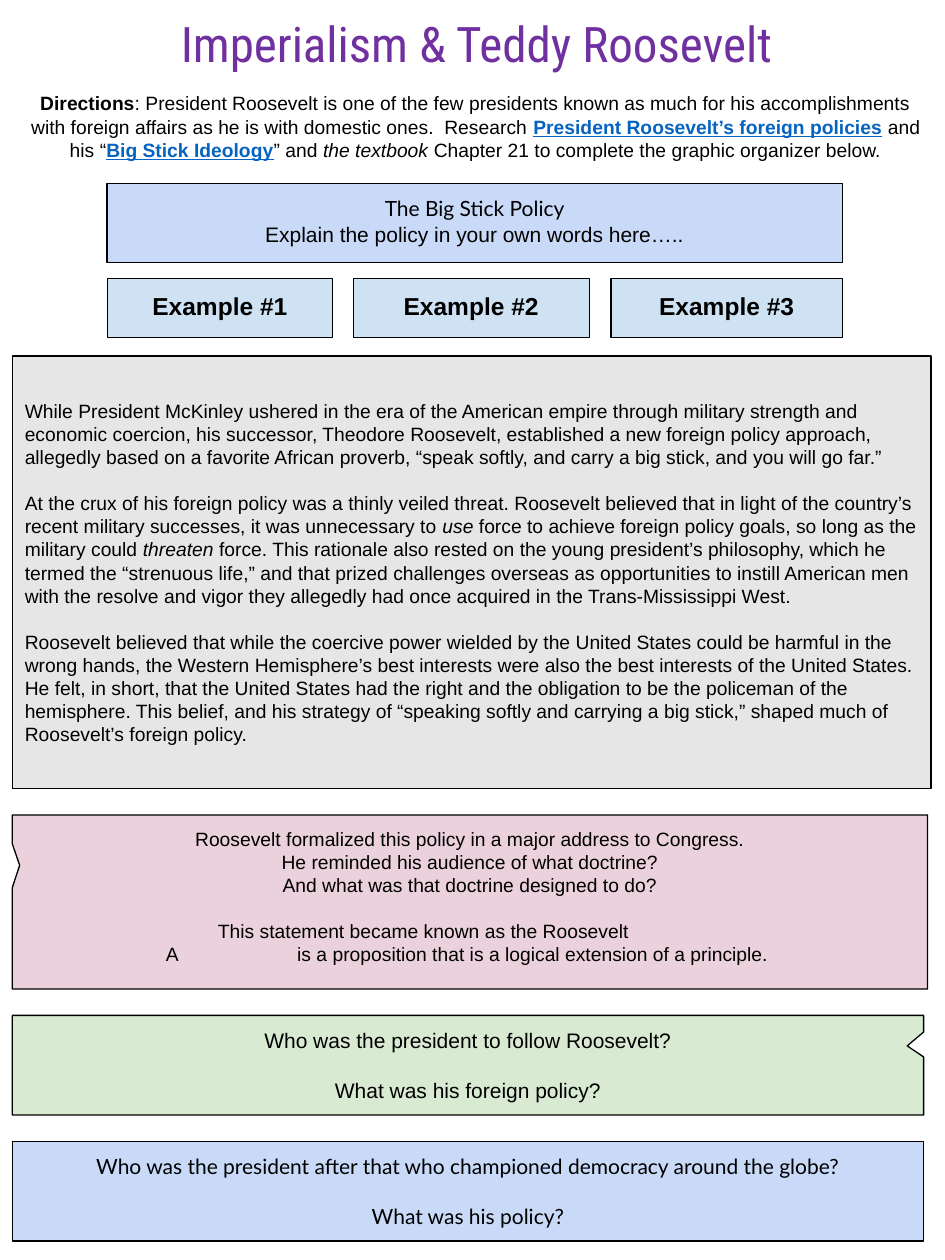
from pptx import Presentation
from pptx import util as u
from pptx.dml.color import RGBColor
from pptx.enum import shapes, text

BLACK = RGBColor(0x00, 0x00, 0x00)
PURPLE = RGBColor(0x70, 0x30, 0xA0)
LINK = RGBColor(0x05, 0x63, 0xC1)
BLUE = RGBColor(0xC9, 0xDA, 0xF8)
PALE = RGBColor(0xCF, 0xE2, 0xF3)
GREY = RGBColor(0xE7, 0xE6, 0xE6)
PINK = RGBColor(0xEA, 0xD1, 0xDC)
GREEN = RGBColor(0xD9, 0xEA, 0xD3)

RECT = shapes.MSO_SHAPE.RECTANGLE
CALL = shapes.MSO_SHAPE.RECTANGULAR_CALLOUT
MID = text.MSO_ANCHOR.MIDDLE
TOP = text.MSO_ANCHOR.TOP
LEFT = text.PP_ALIGN.LEFT
MARGIN = 0.25

# Each paragraph is a list of (text, style) runs; "\n" is a line break.
GUIDE = [
    ("Directions", "b"),
    (": President Roosevelt is one of the few presidents known as much for "
     "his accomplishments with foreign affairs as he is with domestic ones.  "
     "Research ", ""),
    ("President Roosevelt’s foreign policies", "link"),
    (" and his “", ""),
    ("Big Stick Ideology", "link"),
    ("” and ", ""),
    ("the textbook ", "i"),
    ("Chapter 21 to complete the graphic organizer below.", ""),
]
STORY = [
    [("While President McKinley ushered in the era of the American empire "
      "through military strength and economic coercion, his successor, "
      "Theodore Roosevelt, established a new foreign policy approach, "
      "allegedly based on a favorite African proverb, “speak softly, and "
      "carry a big stick, and you will go far.”", "")],
    [("At the crux of his foreign policy was a thinly veiled threat. "
      "Roosevelt believed that in light of the country’s recent military "
      "successes, it was unnecessary to ", ""),
     ("use", "i"),
     (" force to achieve foreign policy goals, so long as the military "
      "could ", ""),
     ("threaten", "i"),
     (" force. This rationale also rested on the young president’s "
      "philosophy, which he termed the “strenuous life,” and that prized "
      "challenges overseas as opportunities to instill American men with "
      "the resolve and vigor they allegedly had once acquired in the "
      "Trans-Mississippi West.", "")],
    [("Roosevelt believed that while the coercive power wielded by the "
      "United States could be harmful in the wrong hands, the Western "
      "Hemisphere’s best interests were also the best interests of the "
      "United States. He felt, in short, that the United States had the "
      "right and the obligation to be the policeman of the hemisphere. This "
      "belief, and his strategy of “speaking softly and carrying a big "
      "stick,” shaped much of Roosevelt’s foreign policy.", "")],
]
SPEECH = [
    [("Roosevelt formalized this policy in a major address to Congress.", "")],
    [("He reminded his audience of what doctrine?", "")],
    [("And what was that doctrine designed to do?", "")],
    [("This statement became known as the Roosevelt ", ""), ("\t\t", "u"),
     ("\n", ""), ("A ", ""), ("\t\t", "u"),
     (" is a proposition that is a logical extension of a principle. ", "")],
]


def add_runs(para, runs):
    for words, style in runs:
        if words == "\n":
            para.add_line_break()
            continue
        run = para.add_run()
        run.text = words
        if style in ("b", "link"):
            run.font.bold = True
        if style in ("u", "link"):
            run.font.underline = True
        if style == "i":
            run.font.italic = True
        if style == "link":
            run.font.color.rgb = LINK


def set_font(para, size, name="Arial", color=BLACK):
    para.font.size = u.Pt(size)
    para.font.name = name
    para.font.color.rgb = color


def write(shape, paras, size, fonts=("Arial",), anchor=TOP,
          align=text.PP_ALIGN.CENTER, gaps=()):
    """Fill a shape; gaps gives the space before paragraphs by index."""
    frame = shape.text_frame
    frame.word_wrap = True
    frame.vertical_anchor = anchor
    frame.margin_left = frame.margin_right = u.Cm(0.25)
    frame.margin_top = frame.margin_bottom = u.Cm(0.25)
    gaps = dict(gaps)
    for i, runs in enumerate(paras):
        para = frame.paragraphs[0] if i == 0 else frame.add_paragraph()
        para.alignment = align
        if i in gaps:
            para.space_before = u.Pt(gaps[i])
        set_font(para, size, fonts[i % len(fonts)])
        add_runs(para, runs)


def add_box(slide, place, fill, kind=RECT, tip=()):
    box = slide.shapes.add_shape(kind, *map(u.Cm, place))
    box.shadow.inherit = False
    box.fill.solid()
    box.fill.fore_color.rgb = fill
    box.line.color.rgb = BLACK
    box.line.width = u.Pt(0.75)
    for i, value in enumerate(tip):
        box.adjustments[i] = value
    return box


def add_title(slide, words):
    title = slide.shapes.title
    title.left, title.top = u.Cm(1.09), u.Cm(0.15)
    title.width, title.height = u.Cm(17.02), u.Cm(1.45)
    frame = title.text_frame
    frame.text = words
    frame.vertical_anchor = TOP
    frame.auto_size = text.MSO_AUTO_SIZE.NONE
    set_font(frame.paragraphs[0], 28, "Roboto Condensed", PURPLE)


def main():
    deck = Presentation()
    deck.slide_width, deck.slide_height = u.Cm(19.05), u.Cm(25.4)
    slide = deck.slides.add_slide(deck.slide_layouts[5])

    # Heading and directions
    add_title(slide, "Imperialism & Teddy Roosevelt")
    guide = slide.shapes.add_textbox(*map(u.Cm, (0.33, 1.65, 18.52, 2.26)))
    write(guide, [GUIDE], 11)
    guide.text_frame.margin_top = u.Cm(0.2)

    # Policy and its examples
    policy = add_box(slide, (2.16, 3.7, 14.82, 1.6), BLUE)
    write(policy, [[("The Big Stick Policy", "")],
                   [("Explain the policy in your own words here…..", "")]],
          12, ("Lato", "Arial"))
    spans = ((2.17, 4.53), (7.12, 4.76), (12.32, 4.66))
    for i, (left, width) in enumerate(spans, 1):
        box = add_box(slide, (left, 5.62, width, 1.19), PALE)
        write(box, [[(f"Example #{i}", "b")]], 14)

    # Background reading
    story = add_box(slide, (MARGIN, 7.18, 18.52, 8.72), GREY)
    write(story, STORY, 11, anchor=MID, align=LEFT, gaps={1: 13, 2: 13})

    # Questions
    speech = add_box(slide, (MARGIN, 16.43, 18.45, 3.51), PINK, CALL,
                     (-0.492, -0.211))
    write(speech, SPEECH, 11, gaps={3: 13})
    asks = (
        (20.47, GREEN, CALL, (0.482, -0.194), "Arial",
         "Who was the president to follow Roosevelt?",
         "What was his foreign policy?"),
        (23.01, BLUE, RECT, (), "Lato",
         "Who was the president after that who championed democracy "
         "around the globe?", "What was his policy?"),
    )
    for top, fill, kind, tip, font, *lines in asks:
        box = add_box(slide, (MARGIN, top, 18.37, 2.01), fill, kind, tip)
        write(box, [[(line, "")] for line in lines], 12, (font,),
              gaps={1: 14})

    deck.save("out.pptx")


if __name__ == "__main__":
    main()
